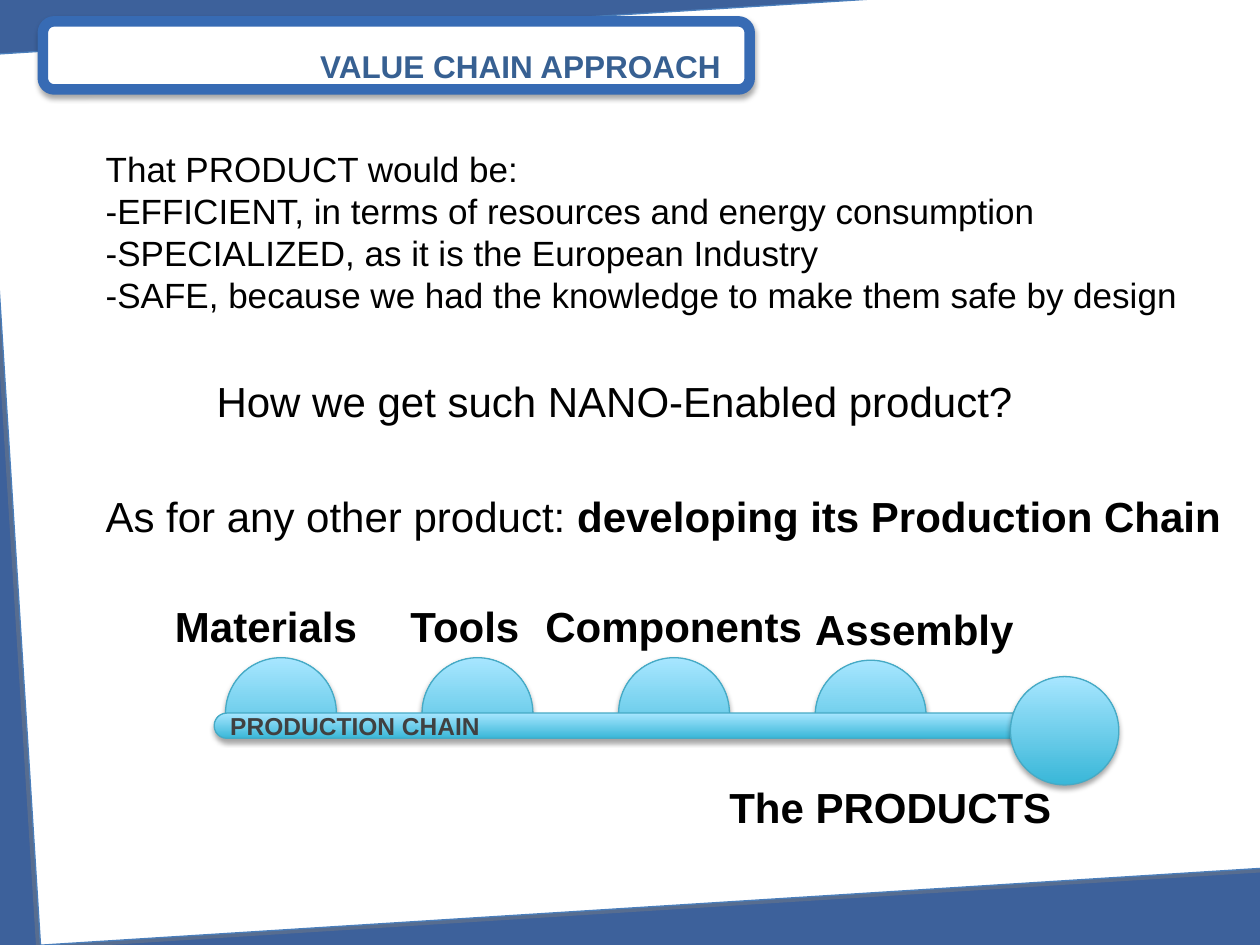
from lxml import etree
from pptx import Presentation
from pptx import util as u
from pptx.dml import color
from pptx.enum import shapes, text
from pptx.oxml import ns

RGB = color.RGBColor
NAVY = RGB(0x3D, 0x61, 0x9B)
WHITE = RGB(0xFF, 0xFF, 0xFF)
BLACK = RGB(0, 0, 0)
EDGE = RGB(0x4A, 0x7E, 0xBB)
FRAME = RGB(0x37, 0x6B, 0xB4)
TITLE = RGB(0x37, 0x60, 0x92)
CHARCOAL = RGB(0x40, 0x40, 0x40)
TEAL = RGB(0x39, 0xB7, 0xD8)
SKY = RGB(0xA7, 0xE6, 0xFF)
RIM = RGB(0x46, 0xAA, 0xC5)

SOFT = {"color": "000000", "alpha": 35, "blur": 3.1, "dist": 1.8, "dir": 90}
HARD = {"color": "808080", "alpha": 40, "blur": 0, "dist": 3, "dir": 135}

PLAIN = {"size": u.Pt(24), "bold": False}
BOLD = {"size": u.Pt(24), "bold": True}
SMALL = {"size": u.Pt(20), "bold": False}
HEAD = {"size": u.Pt(18), "bold": True}
TAG = {"size": u.Pt(14), "bold": True}

HEADING = "VALUE CHAIN APPROACH"
CHAIN = "PRODUCTION CHAIN"
QUALITIES = [
    "That PRODUCT would be:",
    "-EFFICIENT, in terms of resources and energy consumption",
    "-SPECIALIZED, as it is the European Industry",
    "-SAFE, because we had the knowledge to make them safe by design",
]
TEXTS = [
    ((1.62, 2.93, 6.58, 0.5), [[("How we get such NANO-Enabled product?", PLAIN)]]),
    ((0.74, 3.84, 9.14, 0.5), [[("As for any other product: ", PLAIN),
                                ("developing its Production Chain", BOLD)]]),
    ((0.74, 1.12, 8.78, 1.45), [[(line, SMALL)] for line in QUALITIES]),
    ((5.69, 6.15, 2.78, 0.5), [[("The PRODUCTS", BOLD)]]),
]
STAGES = [
    ("Materials", 1.29, 1.66, 0),
    ("Tools", 3.16, 1.07, 0),
    ("Components", 4.23, 2.26, 0),
    ("Assembly", 6.37, 1.79, 0.02),
]
STAGE_LEFT, STAGE_STEP, STAGE_TOP, STAGE_SIZE = 1.79, 1.56, 5.22, 0.88
LABEL_TOP, LABEL_HEIGHT = 4.72, 0.5


def inches(box):
    return [u.Inches(v) for v in box]


def add_runs(p, runs, rgb):
    for words, fmt in runs:
        r = p.add_run()
        r.text = words
        r.font.name = "Arial"
        r.font.color.rgb = rgb
        for key, value in fmt.items():
            setattr(r.font, key, value)


def add_text(s, box, paragraphs, rgb=BLACK, wrap=False, align=text.PP_ALIGN.LEFT):
    tf = s.shapes.add_textbox(*inches(box)).text_frame
    tf.word_wrap = wrap
    if not wrap:
        tf.auto_size = text.MSO_AUTO_SIZE.SHAPE_TO_FIT_TEXT
    for i, runs in enumerate(paragraphs):
        p = tf.paragraphs[0] if i == 0 else tf.add_paragraph()
        p.alignment = align
        add_runs(p, runs, rgb)


def add_shadow(sp, look):
    sp.shadow.inherit = False
    effects = sp._element.spPr.find(ns.qn("a:effectLst"))
    shadow = etree.SubElement(
        effects, ns.qn("a:outerShdw"), blurRad=str(u.Pt(look["blur"])),
        dist=str(u.Pt(look["dist"])), dir=str(look["dir"] * 60000),
        algn="ctr", rotWithShape="0")
    rgb = etree.SubElement(shadow, ns.qn("a:srgbClr"), val=look["color"])
    etree.SubElement(rgb, ns.qn("a:alpha"), val=str(look["alpha"] * 1000))


def add_shape(s, kind, box, line, width, look, adj=()):
    sp = s.shapes.add_shape(kind, *inches(box))
    for i, value in enumerate(adj):
        sp.adjustments[i] = value
    sp.fill.solid()
    sp.fill.fore_color.rgb = WHITE
    sp.line.color.rgb = line
    sp.line.width = u.Pt(width)
    add_shadow(sp, look)
    return sp


def add_glossy(s, kind, box, adj=()):
    sp = add_shape(s, kind, box, RIM, 0.75, SOFT, adj)
    sp.fill.gradient()
    sp.fill.gradient_angle = 90
    for stop, rgb, place in zip(sp.fill.gradient_stops, (TEAL, SKY), (0, 1)):
        stop.color.rgb = rgb
        stop.position = place
    return sp


def main():
    kinds = shapes.MSO_SHAPE
    prs = Presentation()
    prs.slide_width, prs.slide_height = inches((10, 7.5))
    s = prs.slides.add_slide(prs.slide_layouts[6])
    s.background.fill.solid()
    s.background.fill.fore_color.rgb = NAVY

    sheet = add_shape(s, kinds.RECTANGLE, (0.09, 0.11, 10.14, 7.08), EDGE, 0.75, HARD)
    sheet.rotation = 356.4
    add_shape(s, kinds.ROUNDED_RECTANGLE, (0.34, 0.17, 5.61, 0.54), FRAME, 6, SOFT)
    add_text(s, (0.49, 0.32, 5.33, 0.35), [[(HEADING, HEAD)]], TITLE, True,
             text.PP_ALIGN.RIGHT)
    for box, paragraphs in TEXTS:
        add_text(s, box, paragraphs)

    for i, (name, left, width, drop) in enumerate(STAGES):
        add_glossy(s, kinds.CHORD, (STAGE_LEFT + i * STAGE_STEP, STAGE_TOP + drop,
                                    STAGE_SIZE, STAGE_SIZE), (98.11, 10.03))
        add_text(s, (left, LABEL_TOP + drop, width, LABEL_HEIGHT), [[(name, BOLD)]])

    bar = add_glossy(s, kinds.ROUNDED_RECTANGLE, (1.7, 5.66, 6.5, 0.2), (0.5,))
    tf = bar.text_frame
    tf.vertical_anchor = text.MSO_ANCHOR.MIDDLE
    p = tf.paragraphs[0]
    p.alignment = text.PP_ALIGN.LEFT
    add_runs(p, [(CHAIN, TAG)], CHARCOAL)
    add_glossy(s, kinds.OVAL, (8.02, 5.37, 0.86, 0.86))
    prs.save("out.pptx")


if __name__ == "__main__":
    main()
